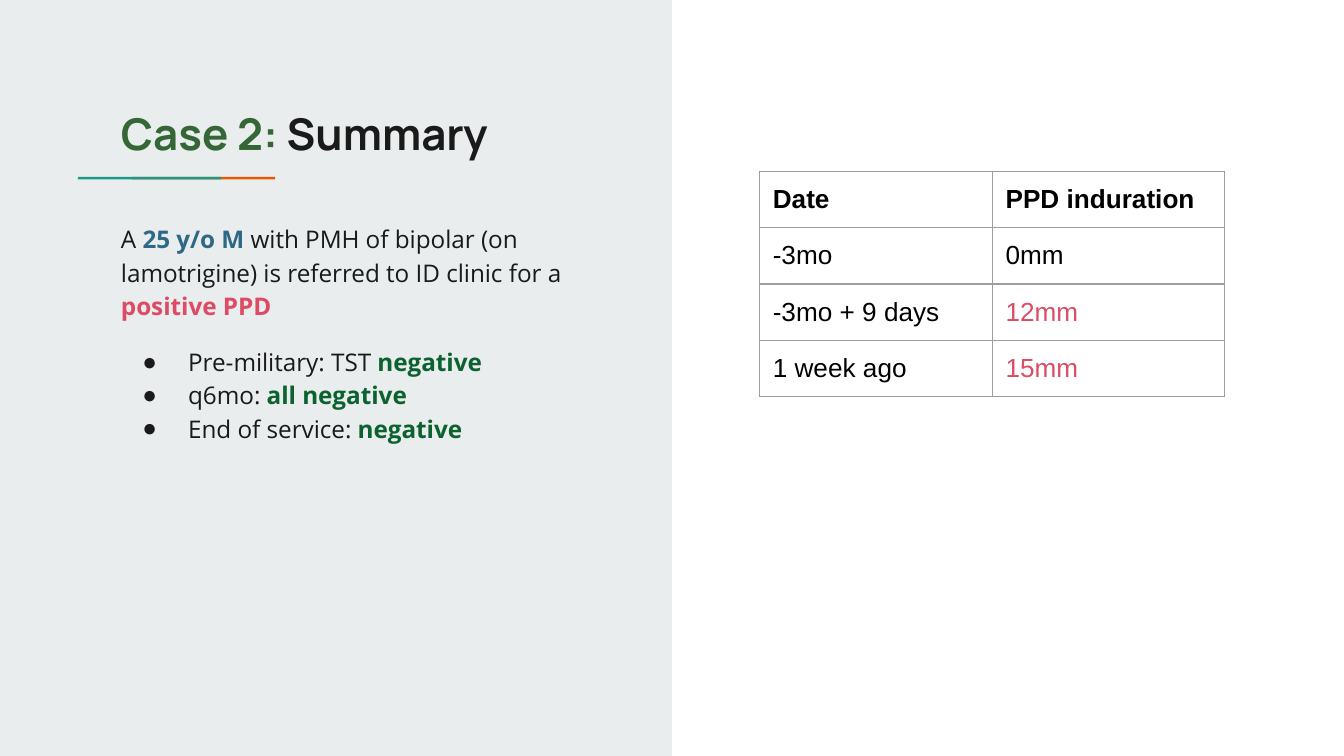
from lxml import etree
from pptx import Presentation
from pptx.dml.color import RGBColor
from pptx.enum import shapes, text
from pptx.oxml.ns import qn
from pptx.util import Pt

INK = "1A1A1A"
BLACK = "000000"
BLUE = "2D6987"
RED = "DC4C64"
GREEN = "0C622E"
INSET = 7.2

SUMMARY = [
    [("A ", INK, False), ("25 y/o M", BLUE, True),
     (" with PMH of bipolar (on lamotrigine) is referred to ID clinic for a ", INK, False),
     ("positive PPD", RED, True)],
    [("Pre-military: TST ", INK, False), ("negative", GREEN, True)],
    [("q6mo: ", INK, False), ("all negative", GREEN, True)],
    [("End of service: ", INK, False), ("negative", GREEN, True)],
]
READINGS = [
    ("Date", "PPD induration"),
    ("-3mo", "0mm"),
    ("-3mo + 9 days", "12mm"),
    ("1 week ago", "15mm"),
]


def colour(value):
    return RGBColor.from_string(value)


def place(box, left, top, width, height):
    box.left, box.top, box.width, box.height = map(Pt, (left, top, width, height))


def add_bar(page, left, top, width, height, fill):
    bar = page.shapes.add_shape(
        shapes.MSO_SHAPE.RECTANGLE, Pt(left), Pt(top), Pt(width), Pt(height))
    bar.shadow.inherit = False
    bar.fill.solid()
    bar.fill.fore_color.rgb = colour(fill)
    bar.line.fill.background()


def prepare_frame(box):
    frame = box.text_frame
    frame.word_wrap = True
    frame.auto_size = text.MSO_AUTO_SIZE.NONE
    frame.vertical_anchor = text.MSO_ANCHOR.TOP
    frame.margin_left = frame.margin_right = Pt(INSET)
    frame.margin_top = frame.margin_bottom = Pt(INSET)
    return frame


def add_spans(para, spans, font, size):
    for wording, ink, bold in spans:
        span = para.add_run()
        span.text = wording
        span.font.name = font
        span.font.size = Pt(size)
        span.font.bold = bold
        span.font.color.rgb = colour(ink)


def set_bullet(para, bulleted):
    properties = para._p.get_or_add_pPr()
    properties.set("marL", str(Pt(36 if bulleted else 0)))
    properties.set("indent", str(Pt(-24.5 if bulleted else 0)))
    if bulleted:
        tint = etree.SubElement(properties, qn("a:buClr"))
        etree.SubElement(tint, qn("a:srgbClr"), val=INK)
        etree.SubElement(properties, qn("a:buFont"), typeface="Arial")
        etree.SubElement(properties, qn("a:buChar"), char="●")
    else:
        etree.SubElement(properties, qn("a:buNone"))


def fill_title(page):
    title = page.shapes.title
    place(title, 57.6, 50.1, 296.6, 42.5)
    para = prepare_frame(title).paragraphs[0]
    para.alignment = text.PP_ALIGN.LEFT
    add_spans(para, [("Case 2:", "356635", True), (" Summary", INK, True)], "Manrope", 23.4)


def fill_summary(page):
    body = page.placeholders[1]
    place(body, 57.6, 110.6, 265.7, 148.3)
    frame = prepare_frame(body)
    for index, spans in enumerate(SUMMARY):
        para = frame.paragraphs[0] if index == 0 else frame.add_paragraph()
        set_bullet(para, index > 0)
        para.alignment = text.PP_ALIGN.LEFT
        para.line_spacing = 1.15
        para.space_before = Pt(12 if index == 1 else 0)
        add_spans(para, spans, "Open Sans", 13)


def add_borders(cell):
    properties = cell._tc.get_or_add_tcPr()
    for side in ("lnL", "lnR", "lnT", "lnB"):
        border = etree.SubElement(properties, qn(f"a:{side}"), w=str(Pt(0.75)))
        fill = etree.SubElement(border, qn("a:solidFill"))
        etree.SubElement(fill, qn("a:srgbClr"), val="9E9E9E")


def add_readings(page):
    width, height = 124.7, 30.2
    rows, columns = len(READINGS), len(READINGS[0])
    table = page.shapes.add_table(
        rows, columns, Pt(406.8), Pt(91.8), Pt(width * columns), Pt(height * rows)).table
    for column in table.columns:
        column.width = Pt(width)
    for row, values in enumerate(READINGS):
        table.rows[row].height = Pt(height)
        for column, value in enumerate(values):
            cell = table.cell(row, column)
            add_borders(cell)
            cell.fill.background()
            cell.margin_left = cell.margin_right = Pt(INSET)
            cell.margin_top = cell.margin_bottom = Pt(INSET)
            ink = RED if value in ("12mm", "15mm") else BLACK
            add_spans(cell.text_frame.paragraphs[0], [(value, ink, row == 0)], "Arial", 14)


def main():
    deck = Presentation()
    deck.slide_width, deck.slide_height = Pt(720), Pt(405)
    page = deck.slides.add_slide(deck.slide_layouts[1])
    add_bar(page, 0, 0, 360, 405, "E9EDEE")
    for left, fill in ((70.8, "EB5600"), (41.8, "1A9988")):
        add_bar(page, left, 94.7, 76.6, 1.4, fill)
    for box in list(page.placeholders):
        page.shapes._spTree.append(box._element)
    fill_summary(page)
    fill_title(page)
    add_readings(page)
    deck.save("out.pptx")


if __name__ == "__main__":
    main()
